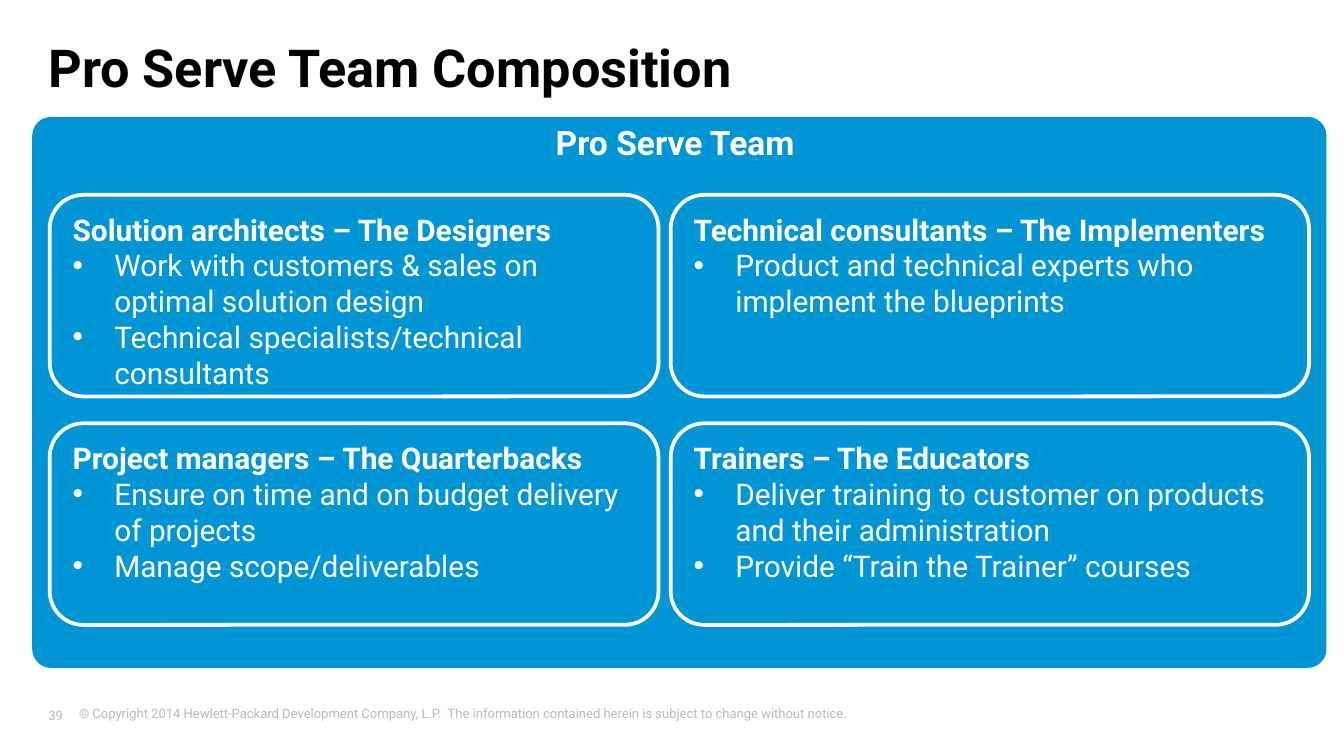
"""Build the Pro Serve team composition slide."""
from lxml import etree
from pptx import Presentation
from pptx import util as u
from pptx.dml.color import RGBColor
from pptx.enum import shapes, text
from pptx.oxml.ns import qn

FONT = "Roboto"
COLORS = {"ink": "000000", "panel": "0096D6", "white": "FFFFFF", "footer": "B9B8BB"}
SLIDE_WIDTH = 10
SLIDE_HEIGHT = SLIDE_WIDTH * 9 / 16
COLUMNS = [(0.37, 4.53), (4.99, 4.75)]
FIRST_ROW, ROW_PITCH, CARD_HEIGHT = 1.45, 1.7, 1.5
INDENT = 0.31
INSETS = (0.1, 0.05, 0.1, 0.05)
TEAM = [
    [
        ("Solution architects – The Designers",
         ["Work with customers & sales on optimal solution design",
          "Technical specialists/technical consultants"]),
        ("Technical consultants – The Implementers",
         ["Product and technical experts who implement the blueprints"]),
    ],
    [
        ("Project managers – The Quarterbacks",
         ["Ensure on time and on budget delivery of projects",
          "Manage scope/deliverables"]),
        ("Trainers – The Educators",
         ["Deliver training to customer on products and their administration",
          "Provide “Train the Trainer” courses"]),
    ],
]


def color(name):
    """Return a named colour."""
    return RGBColor.from_string(COLORS[name])


def place(area):
    """Turn left, top, width and height in inches into lengths."""
    return [u.Inches(value) for value in area]


def set_frame(box, insets=INSETS, anchor=text.MSO_ANCHOR.TOP):
    """Set the margins, wrapping and anchor of a box and return its frame."""
    frame = box.text_frame
    frame.word_wrap = True
    frame.auto_size = text.MSO_AUTO_SIZE.NONE
    frame.vertical_anchor = anchor
    (frame.margin_left, frame.margin_top,
     frame.margin_right, frame.margin_bottom) = place(insets)
    return frame


def add_run(para, words, size, ink, bold=False, align=text.PP_ALIGN.LEFT):
    """Add one formatted run to a paragraph."""
    para.alignment = align
    span = para.add_run()
    span.text = words
    span.font.name = FONT
    span.font.size = u.Pt(size)
    span.font.bold = bold
    span.font.color.rgb = color(ink)


def add_bullet(para):
    """Give a paragraph a hanging round bullet."""
    props = para._p.get_or_add_pPr()
    props.set("marL", str(u.Inches(INDENT)))
    props.set("indent", str(u.Inches(-INDENT)))
    etree.SubElement(props, qn("a:buFont")).set("typeface", "Arial")
    etree.SubElement(props, qn("a:buChar")).set("char", "•")


def add_title(page, words):
    """Place and fill the title placeholder."""
    title = page.shapes.title
    title.left, title.top, title.width, title.height = place((0.36, 0.26, 8.88, 0.47))
    frame = set_frame(title, (0, 0, 0, 0))
    add_run(frame.paragraphs[0], words, 28, "ink", bold=True)


def add_rounded(page, area):
    """Add a rounded rectangle in the panel colour."""
    box = page.shapes.add_shape(shapes.MSO_SHAPE.ROUNDED_RECTANGLE, *place(area))
    box.shadow.inherit = False
    box.fill.solid()
    box.fill.fore_color.rgb = color("panel")
    return box


def add_panel(page, heading):
    """Add the panel that holds the cards."""
    panel = add_rounded(page, (0.24, 0.87, 9.63, 4.1))
    panel.adjustments[0] = 0.034
    panel.line.fill.background()
    frame = set_frame(panel, (0.1, 0, 0.1, 0.05))
    add_run(frame.paragraphs[0], heading, 18, "white", True, text.PP_ALIGN.CENTER)


def add_card(page, row, column, heading, duties):
    """Add one outlined role card at a grid position."""
    left, width = COLUMNS[column]
    card = add_rounded(page, (left, FIRST_ROW + row * ROW_PITCH, width, CARD_HEIGHT))
    card.line.color.rgb = color("white")
    card.line.width = u.Pt(2)
    frame = set_frame(card, (0.1, 0.05, 0 if column else 0.1, 0.05))
    add_run(frame.paragraphs[0], heading, 16, "white", bold=True)
    for duty in duties:
        para = frame.add_paragraph()
        add_bullet(para)
        add_run(para, duty, 16, "white")


def add_footer(page, area, words, **layout):
    """Add a small grey footer text."""
    frame = set_frame(page.shapes.add_textbox(*place(area)), **layout)
    add_run(frame.paragraphs[0], words, 7, "footer")


def main():
    """Build and save the slide."""
    deck = Presentation()
    deck.slide_width, deck.slide_height = u.Inches(SLIDE_WIDTH), u.Inches(SLIDE_HEIGHT)
    page = deck.slides.add_slide(deck.slide_layouts[5])
    add_footer(page, (0.49, 5.2, 8.76, 0.25),
               "© Copyright 2014 Hewlett-Packard Development Company, L.P.  "
               "The information contained herein is subject to change without notice.")
    add_footer(page, (0.36, 5.24, 0.35, 0.16), "39",
               insets=(0, 0.05, 0.1, 0.05), anchor=text.MSO_ANCHOR.MIDDLE)
    add_title(page, "Pro Serve Team Composition")
    add_panel(page, "Pro Serve Team ")
    for row, cards in enumerate(TEAM):
        for column, (heading, duties) in enumerate(cards):
            add_card(page, row, column, heading, duties)
    deck.save("out.pptx")


if __name__ == "__main__":
    main()
